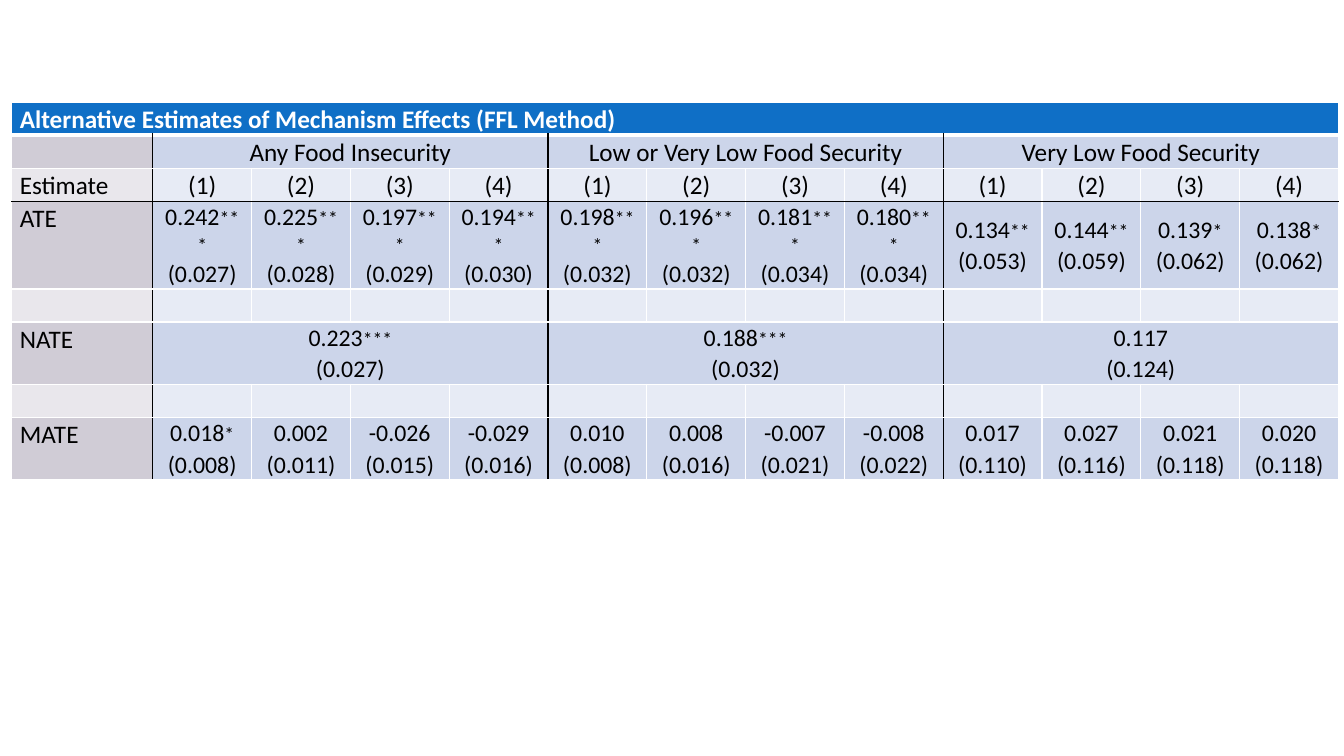
"""Build the slide with the table of mechanism effect estimates."""
from lxml.etree import SubElement as Sub
from pptx import Presentation
from pptx.dml.color import RGBColor as RGB
from pptx.enum.text import MSO_ANCHOR as Anchor, PP_ALIGN as Align
from pptx.oxml.ns import qn
from pptx.util import Cm, Pt

HUE = {"head": "0F6FC6", "white": "FFFFFF", "black": "000000",
       "stub": ("E9E7EC", "D0CCD6"), "body": ("E7EBF5", "CCD5EA")}
TITLE = "Alternative Estimates of Mechanism Effects (FFL Method)"
GROUPS = ["Any Food Insecurity", "Low or Very Low Food Security", "Very Low Food Security"]
STATS = [
    (3, "ATE", 1,
     "0.242*** 0.225*** 0.197*** 0.194*** 0.198*** 0.196*** "
     "0.181*** 0.180*** 0.134** 0.144** 0.139* 0.138*",
     "0.027 0.028 0.029 0.030 0.032 0.032 0.034 0.034 0.053 0.059 0.062 0.062"),
    (5, "NATE", 4, "0.223*** 0.188*** 0.117", "0.027 0.032 0.124"),
    (7, "MATE", 1,
     "0.018* 0.002 -0.026 -0.029 0.010 0.008 -0.007 -0.008 0.017 0.027 0.021 0.020",
     "0.008 0.011 0.015 0.016 0.008 0.016 0.021 0.022 0.110 0.116 0.118 0.118"),
]
ROWS, COLS = 8, 13


def put(cell, lines, size=18, align=Align.CENTER, hue="black"):
    frame = cell.text_frame
    for i, line in enumerate(lines):
        para = frame.add_paragraph() if i else frame.paragraphs[0]
        value = line.rstrip("*")
        para.text = value
        para.alignment, para.line_spacing = align, 1.07
        if value != line:
            para.add_run().text = line[len(value):]
        for run in para.runs:
            font = run.font
            font.name, font.bold = "Calibri", hue == "white"
            font.size = Pt(14 if "*" in run.text else size)
            font.color.rgb = RGB.from_string(HUE[hue])


def edge(cell, side, hue, width=1):
    line = Sub(cell._tc.get_or_add_tcPr(), qn(f"a:ln{side}"), w=str(Pt(width)))
    Sub(Sub(line, qn("a:solidFill")), qn("a:srgbClr"), val=HUE[hue])


deck = Presentation()
deck.slide_width, deck.slide_height = Cm(33.87), Cm(19.05)
slide = deck.slides.add_slide(deck.slide_layouts[6])
frame = slide.shapes.add_table(ROWS, COLS, Cm(0.3), Cm(2.58), Cm(33.43), Cm(6.64))
table = frame.table
table.horz_banding = False
for c, col in enumerate(table.columns):
    col.width = Cm(2.49 if c else 3.55)
for row in table.rows:
    row.height = Cm(0.83)
frame.height = Cm(8.81)

table.cell(0, 0).merge(table.cell(0, COLS - 1))
for r in (1, 5):
    for c in range(1, COLS, 4):
        table.cell(r, c).merge(table.cell(r, c + 3))

for r in range(ROWS):
    for c in range(COLS):
        cell = table.cell(r, c)
        last = c + cell.span_width - 1 if cell.is_merge_origin else c
        edge(cell, "L", "black" if r and c in (1, 5, 9) else "white")
        edge(cell, "R", "black" if r and last in (0, 4, 8) else "white")
        edge(cell, "T", "black" if r == 3 else "white")
        edge(cell, "B", "black" if r == 2 else "white", 1 if r else 3)
        cell.fill.solid()
        tint = HUE["body" if c else "stub"][r % 2] if r else HUE["head"]
        cell.fill.fore_color.rgb = RGB.from_string(tint)
        cell.margin_left = cell.margin_right = Cm(0.2)
        cell.margin_top = cell.margin_bottom = 0
        top = r == 0 or (c == 0 and r != 2)
        cell.vertical_anchor = Anchor.TOP if top else Anchor.MIDDLE

put(table.cell(0, 0), [TITLE], align=Align.LEFT, hue="white")
for g, group in enumerate(GROUPS):
    put(table.cell(1, 1 + 4 * g), [group])
put(table.cell(2, 0), ["Estimate"], align=Align.LEFT)
for c in range(1, COLS):
    put(table.cell(2, c), [f"({(c - 1) % 4 + 1})"])
for r, label, step, means, errors in STATS:
    put(table.cell(r, 0), [label], align=Align.LEFT)
    for i, (mean, error) in enumerate(zip(means.split(), errors.split())):
        put(table.cell(r, 1 + i * step), [mean, f"({error})"], size=17)

deck.save("out.pptx")
